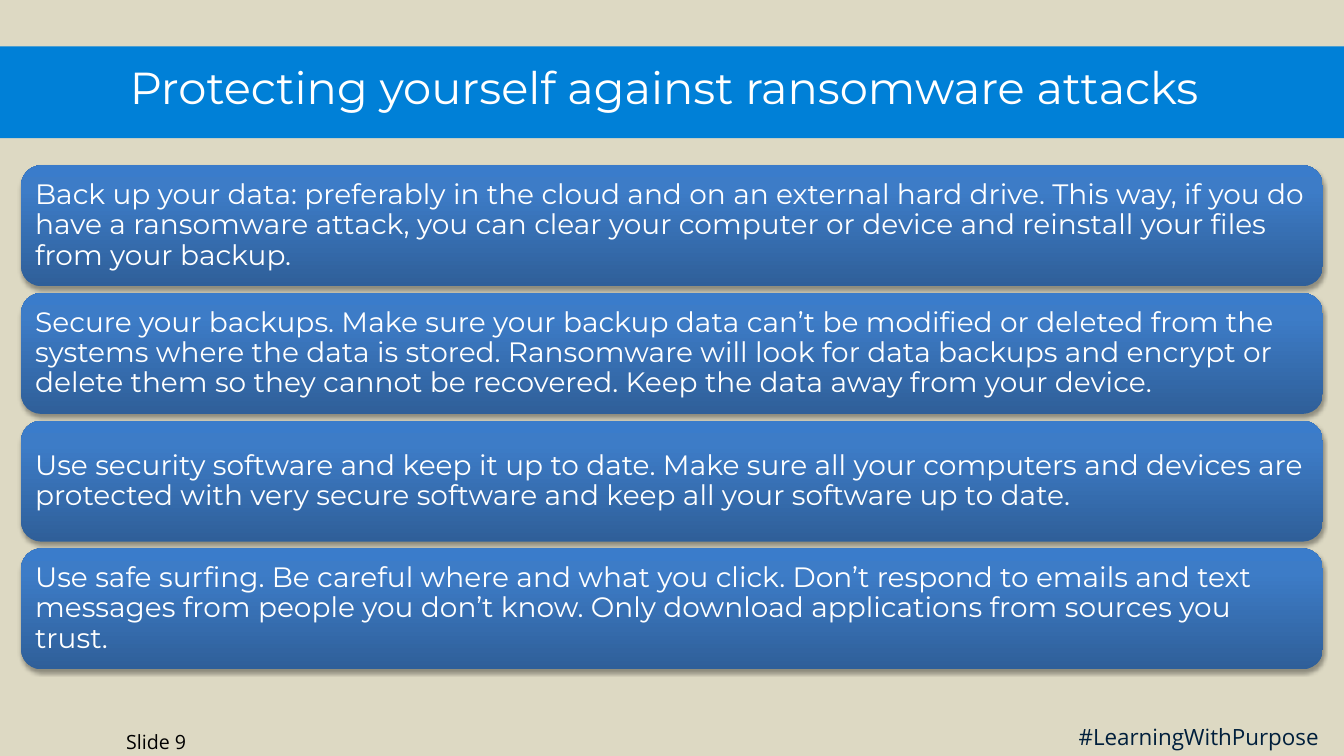
from lxml import etree
from pptx import Presentation
from pptx.dml.color import RGBColor
from pptx.enum.shapes import MSO_SHAPE
from pptx.enum.text import MSO_ANCHOR, PP_ALIGN
from pptx.oxml.ns import qn
from pptx.util import Inches, Pt

RECTANGLE = MSO_SHAPE.RECTANGLE
ROUNDED = MSO_SHAPE.ROUNDED_RECTANGLE
MIDDLE = MSO_ANCHOR.MIDDLE
LEFT, CENTER = PP_ALIGN.LEFT, PP_ALIGN.CENTER

GRADIENT = [(0, "2F5F99"), (80, "3D7CC7"), (100, "3A7CCB")]
TIPS = [
    "Back up your data: preferably in the cloud and on an external hard drive. This way, if you do have a ransomware attack, you can clear your computer or device and reinstall your files from your backup.",
    "Secure your backups. Make sure your backup data can’t be modified or deleted from the systems where the data is stored. Ransomware will look for data backups and encrypt or delete them so they cannot be recovered. Keep the data away from your device.",
    "Use security software and keep it up to date. Make sure all your computers and devices are protected with very secure software and keep all your software up to date.",
    "Use safe surfing. Be careful where and what you click. Don’t respond to emails and text messages from people you don’t know. Only download applications from sources you trust.",
]
LABELS = [
    ("#LearningWithPurpose", 10.6, 7.13, 2.7, 0.37, 16, "Open Sans", "001F3C", LEFT),
    ("Slide 9", 1.08, 7.19, 0.94, 0.34, 14, "Open Sans", "000000", CENTER),
    ("Protecting yourself against ransomware attacks", 0.37, 0.6, 12.44, 0.71, 32, "Montserrat", "FFFFFF", CENTER),
]


def color(value):
    return RGBColor.from_string(value)


def write_text(shape, text, size, font, value, alignment):
    text_frame = shape.text_frame
    text_frame.word_wrap = True
    text_frame.text = text
    paragraph = text_frame.paragraphs[0]
    paragraph.alignment = alignment
    run_font = paragraph.runs[0].font
    run_font.size = Pt(size)
    run_font.name = font
    run_font.color.rgb = color(value)
    return paragraph


presentation = Presentation()
presentation.slide_width = Inches(13.33)
presentation.slide_height = Inches(7.5)
slide = presentation.slides.add_slide(presentation.slide_layouts[6])
slide.background.fill.solid()
slide.background.fill.fore_color.rgb = color("DDD9C3")

band = slide.shapes.add_shape(RECTANGLE, 0, Inches(0.46), Inches(13.33), Inches(0.91))
band.shadow.inherit = False
band.fill.solid()
band.fill.fore_color.rgb = color("0080D7")
band.line.fill.background()

for text, left, top, width, height, size, font, value, alignment in LABELS:
    label = slide.shapes.add_textbox(Inches(left), Inches(top), Inches(width), Inches(height))
    paragraph = write_text(label, text, size, font, value, alignment)
    if font == "Montserrat":
        paragraph.line_spacing = 0.9

for index, tip in enumerate(TIPS):
    card = slide.shapes.add_shape(
        ROUNDED, Inches(0.21), Inches(1.64 + index * 1.267), Inches(12.91), Inches(1.2))
    card.line.fill.background()
    card.fill.gradient()
    card.fill.gradient_angle = 90
    properties = card._element.spPr
    stops = properties.find(qn("a:gradFill")).find(qn("a:gsLst"))
    for stop in list(stops):
        stops.remove(stop)
    for position, value in GRADIENT:
        stop = etree.SubElement(stops, qn("a:gs"), pos=str(position * 1000))
        etree.SubElement(stop, qn("a:srgbClr"), val=value)

    card.shadow.inherit = False
    shadow = etree.SubElement(
        properties.find(qn("a:effectLst")), qn("a:outerShdw"),
        blurRad=str(Pt(3.1)), dist=str(Pt(1.8)), dir="5400000", rotWithShape="0")
    shadow_color = etree.SubElement(shadow, qn("a:srgbClr"), val="000000")
    etree.SubElement(shadow_color, qn("a:alpha"), val="35000")

    text_frame = card.text_frame
    text_frame.vertical_anchor = MIDDLE
    text_frame.margin_left = text_frame.margin_right = Inches(0.08)
    text_frame.margin_top = text_frame.margin_bottom = Inches(0.08)
    paragraph = write_text(card, tip, 20, "Montserrat", "FFFFFF", LEFT)
    paragraph.line_spacing = 0.9
    paragraph.space_after = Pt(7)

presentation.save("out.pptx")
